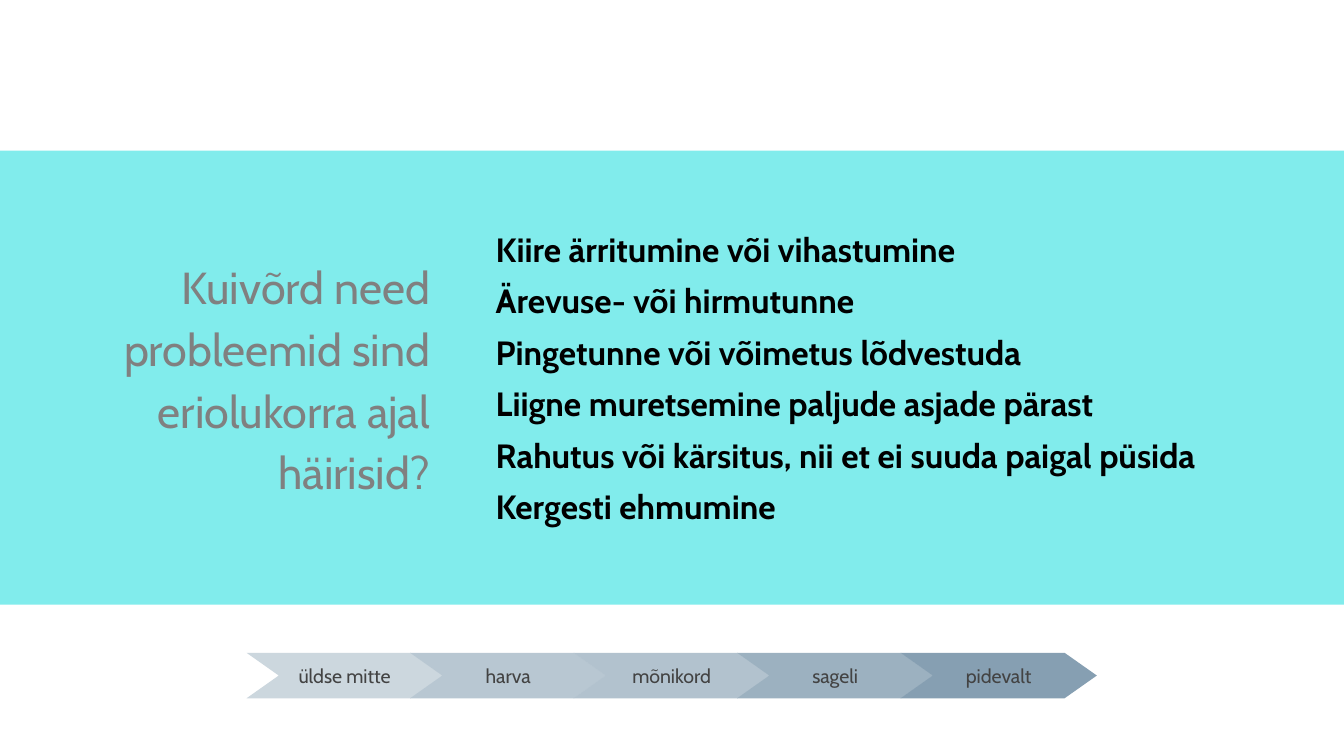
"""Build a survey slide with a question, its items and an answer scale."""
from dataclasses import dataclass

from pptx import Presentation
from pptx.dml.color import RGBColor
from pptx.enum.shapes import MSO_SHAPE
from pptx.enum.text import MSO_ANCHOR, MSO_AUTO_SIZE, PP_ALIGN
from pptx.util import Cm, Pt

RECT, CHEVRON = MSO_SHAPE.RECTANGLE, MSO_SHAPE.CHEVRON
MIDDLE, BOTTOM = MSO_ANCHOR.MIDDLE, MSO_ANCHOR.BOTTOM
LEFT, CENTER, RIGHT = PP_ALIGN.LEFT, PP_ALIGN.CENTER, PP_ALIGN.RIGHT
FIXED = MSO_AUTO_SIZE.NONE

QUESTION = "Kuivõrd need probleemid sind eriolukorra ajal häirisid?"
ITEMS = [
    "Kiire ärritumine või vihastumine",
    "Ärevuse- või hirmutunne",
    "Pingetunne või võimetus lõdvestuda",
    "Liigne muretsemine paljude asjade pärast",
    "Rahutus või kärsitus, nii et ei suuda paigal püsida",
    "Kergesti ehmumine",
]
SCALE = [
    ("üldse mitte", "CCD7DE"),
    ("harva", "B8C7D2"),
    ("mõnikord", "B2C2CE"),
    ("sageli", "9CB1C0"),
    ("pidevalt", "869FB2"),
]


@dataclass(frozen=True)
class Theme:
    font: str = "Cabin"
    band: str = "81ECEC"
    title: str = "808080"
    body: str = "000000"
    label: str = "434343"
    title_size: float = 24
    body_size: float = 18
    label_size: float = 10.5


THEME = Theme()
WIDTH, HEIGHT = 25.4, 14.29
BAND = (0, 2.85, WIDTH, 8.58)
TITLE = (0.86, 7.72, 7.52, 1.96)
BODY = (9.12, 5.59, 15.42, 3.1)
STEP_LEFT, STEP_TOP, STEP_GAP = 4.66, 12.34, 3.09
STEP_WIDTH, STEP_HEIGHT, STEP_TIP = 3.71, 0.86, 0.61


def place(box):
    return [Cm(side) for side in box]


def write(frame, lines, size, color, align, anchor, bold=False, after=0, pitch=1.0):
    frame.auto_size = FIXED
    frame.vertical_anchor = anchor
    for i, line in enumerate(lines):
        para = frame.add_paragraph() if i else frame.paragraphs[0]
        para.alignment = align
        para.space_before, para.space_after = Pt(0), Pt(after)
        para.line_spacing = pitch
        run = para.add_run()
        run.text = line
        font = run.font
        font.name, font.size, font.bold = THEME.font, Pt(size), bold
        font.color.rgb = RGBColor.from_string(color)


def draw(shapes, kind, box, color):
    shape = shapes.add_shape(kind, *place(box))
    shape.shadow.inherit = False
    shape.fill.solid()
    shape.fill.fore_color.rgb = RGBColor.from_string(color)
    shape.line.fill.background()
    return shape


def add_title(slide):
    title = slide.shapes.title
    title.left, title.top, title.width, title.height = place(TITLE)
    frame = title.text_frame
    frame.word_wrap = True
    frame.margin_left = frame.margin_right = Cm(0.25)
    frame.margin_top = frame.margin_bottom = Cm(0.25)
    write(frame, [QUESTION], THEME.title_size, THEME.title, RIGHT, BOTTOM, pitch=1.15)
    slide.shapes.element.append(title.element)


def add_items(slide):
    frame = slide.shapes.add_textbox(*place(BODY)).text_frame
    frame.word_wrap = True
    write(frame, ITEMS, THEME.body_size, THEME.body, LEFT, MIDDLE, bold=True, after=6)


def add_scale(slide):
    group = slide.shapes.add_group_shape()
    for i, (label, color) in enumerate(SCALE):
        box = (STEP_LEFT + i * STEP_GAP, STEP_TOP, STEP_WIDTH, STEP_HEIGHT)
        step = draw(group.shapes, CHEVRON, box, color)
        step.adjustments[0] = STEP_TIP / STEP_HEIGHT
        frame = step.text_frame
        frame.word_wrap = False
        write(frame, [label], THEME.label_size, THEME.label, CENTER, MIDDLE)


def main():
    deck = Presentation()
    deck.slide_width, deck.slide_height = Cm(WIDTH), Cm(HEIGHT)
    slide = deck.slides.add_slide(deck.slide_layouts[5])
    draw(slide.shapes, RECT, BAND, THEME.band)
    add_items(slide)
    add_scale(slide)
    add_title(slide)
    deck.save("out.pptx")


if __name__ == "__main__":
    main()
